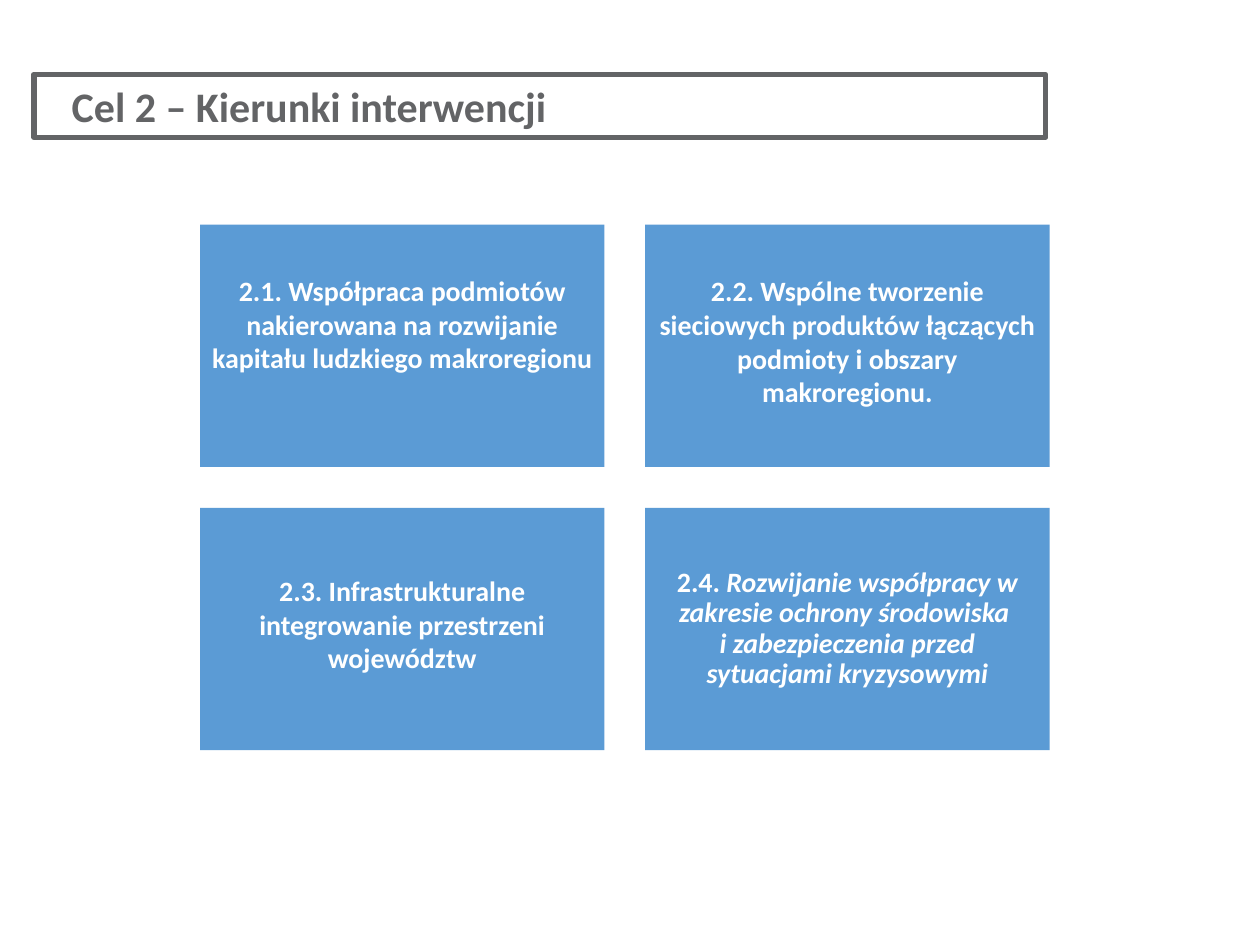
from pptx import Presentation
from pptx import util as u
from pptx.dml import color
from pptx.enum import shapes, text

COLOURS = {"tile": "5B9BD5", "tile_text": "FFFFFF", "heading": "636466"}
FONT = "Calibri"
TILE_W, TILE_H, GAP = 231.1, 138.5, 23.3
GRID_LEFT, GRID_TOP = 114.3, 128.4
TILE_INSET = 5

DIRECTIONS = [
    ([("2.1. Współpraca podmiotów nakierowana na rozwijanie kapitału ludzkiego makroregionu", False)], 25, 1),
    ([("2.2. Wspólne tworzenie sieciowych produktów łączących podmioty i obszary makroregionu.", False)], 5.5, 1),
    ([("2.3. Infrastrukturalne integrowanie przestrzeni województw", False)], 5.5, 1),
    ([("2.4.", False),
      (" Rozwijanie współpracy w zakresie ochrony środowiska \ni zabezpieczenia przed sytuacjami kryzysowymi", True)], 0, 0.9),
]


def rgb(name):
    return color.RGBColor.from_string(COLOURS[name])


def add_rectangle(slide, left, top, width, height):
    rectangle = slide.shapes.add_shape(
        shapes.MSO_SHAPE.RECTANGLE, u.Pt(left), u.Pt(top), u.Pt(width), u.Pt(height))
    rectangle.shadow.inherit = False
    rectangle.text_frame.word_wrap = True
    return rectangle


def add_run(paragraph, wording, size, colour, italic=None):
    for index, line in enumerate(wording.split("\n")):
        if index:
            paragraph.add_line_break()
        run = paragraph.add_run()
        run.text = line
        run.font.name = FONT
        run.font.size = u.Pt(size)
        run.font.bold = True
        run.font.italic = italic
        run.font.color.rgb = rgb(colour)


def add_heading(slide, wording):
    heading = add_rectangle(slide, 19.4, 42.5, 578.2, 36)
    heading.fill.background()
    heading.line.color.rgb = rgb("heading")
    heading.line.width = u.Pt(3)
    frame = heading.text_frame
    frame.vertical_anchor = text.MSO_ANCHOR.TOP
    frame.auto_size = text.MSO_AUTO_SIZE.SHAPE_TO_FIT_TEXT
    frame.margin_left = u.Pt(21.6)
    paragraph = frame.paragraphs[0]
    paragraph.alignment = text.PP_ALIGN.JUSTIFY
    paragraph.space_after = u.Pt(6)
    add_run(paragraph, wording, 24, "heading")


def add_tile(slide, left, top, runs, lift, spacing):
    tile = add_rectangle(slide, left, top, TILE_W, TILE_H)
    tile.fill.solid()
    tile.fill.fore_color.rgb = rgb("tile")
    tile.line.fill.background()
    frame = tile.text_frame
    frame.vertical_anchor = text.MSO_ANCHOR.MIDDLE
    frame.margin_left = frame.margin_right = frame.margin_top = u.Pt(TILE_INSET)
    frame.margin_bottom = u.Pt(TILE_INSET + lift)
    paragraph = frame.paragraphs[0]
    paragraph.alignment = text.PP_ALIGN.CENTER
    paragraph.line_spacing = spacing
    for wording, italic in runs:
        add_run(paragraph, wording, 16, "tile_text", italic)


def main():
    deck = Presentation()
    deck.slide_width, deck.slide_height = u.Pt(720), u.Pt(540)
    slide = deck.slides.add_slide(deck.slide_layouts[6])
    for index, (runs, lift, spacing) in enumerate(DIRECTIONS):
        row, column = divmod(index, 2)
        add_tile(slide, GRID_LEFT + column * (TILE_W + GAP),
                 GRID_TOP + row * (TILE_H + GAP), runs, lift, spacing)
    add_heading(slide, "Cel 2 – Kierunki interwencji")
    deck.save("out.pptx")


if __name__ == "__main__":
    main()
